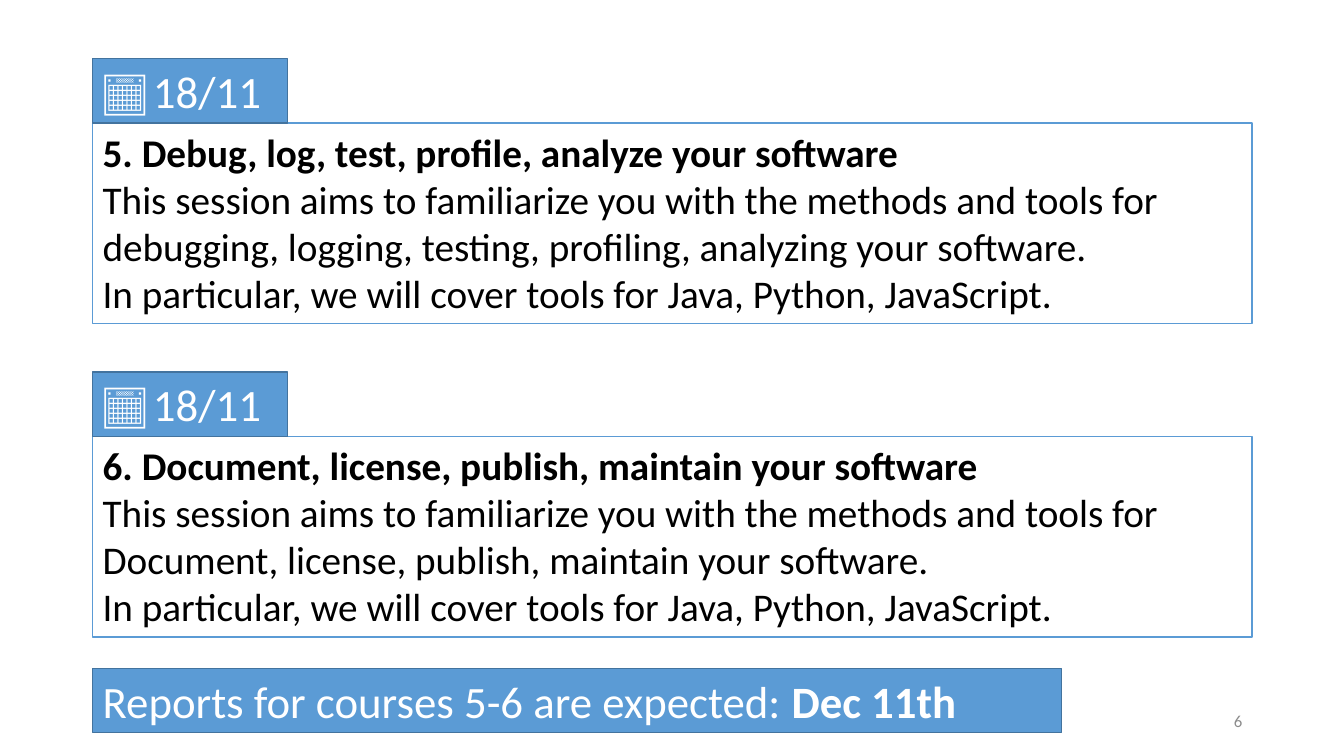
from pptx import Presentation
from pptx.dml.color import RGBColor
from pptx.enum.shapes import MSO_SHAPE
from pptx.enum.text import MSO_ANCHOR, MSO_AUTO_SIZE, PP_ALIGN
from pptx.util import Inches, Pt

RECT = MSO_SHAPE.RECTANGLE
TOP, MIDDLE = MSO_ANCHOR.TOP, MSO_ANCHOR.MIDDLE
LEFT, RIGHT = PP_ALIGN.LEFT, PP_ALIGN.RIGHT
FIT = MSO_AUTO_SIZE.SHAPE_TO_FIT_TEXT

FONT = "Calibri"
BLUE, DARK_BLUE = "5B9BD5", "43739E"
WHITE, BLACK, GREY = "FFFFFF", "000000", "8C8C8C"
MARGIN = 0.92
BAR_H = 0.64

TOOLS = "In particular, we will cover tools for Java, Python, JavaScript."
AIM = "This session aims to familiarize you with the methods and tools for "
SESSIONS = [
    (0.58, "18/11", "5. Debug, log, test, profile, analyze your software",
     "debugging, logging, testing, profiling, analyzing your software."),
    (3.69, "18/11", "6. Document, license, publish, maintain your software",
     "Document, license, publish, maintain your software."),
]


def rgb(color):
    return RGBColor.from_string(color)


def add_paragraphs(tf, paragraphs, color, align=LEFT):
    """Each paragraph is a list of (text, size, bold) runs."""
    for i, runs in enumerate(paragraphs):
        p = tf.add_paragraph() if i else tf.paragraphs[0]
        p.alignment = align
        for text, size, bold in runs:
            r = p.add_run()
            r.text = text
            r.font.name = FONT
            r.font.size = Pt(size)
            r.font.bold = bold
            r.font.color.rgb = rgb(color)


def add_box(s, top, width, height, fill, line, color, paragraphs, wrap=True):
    sp = s.shapes.add_shape(RECT, Inches(MARGIN), Inches(top), Inches(width), Inches(height))
    sp.shadow.inherit = False
    sp.fill.solid()
    sp.fill.fore_color.rgb = rgb(fill)
    sp.line.color.rgb = rgb(line)
    sp.line.width = Pt(1)
    tf = sp.text_frame
    tf.word_wrap = wrap
    tf.auto_size = FIT
    tf.vertical_anchor = TOP
    add_paragraphs(tf, paragraphs, color)


def add_bar(s, top, width, runs, wrap=True):
    add_box(s, top, width, BAR_H, BLUE, DARK_BLUE, WHITE, [runs], wrap)


def add_session(s, top, date, title, topics):
    body = [[(title, 28, True)], [(AIM + topics, 28, False)], [(TOOLS, 28, False)]]
    add_box(s, top + BAR_H, 11.5, 1.99, WHITE, BLUE, BLACK, body)
    add_bar(s, top, 1.93, [("📅", 32, False), (" ", 18, False), (date, 32, False)], wrap=False)


def add_page_number(s, number):
    sp = s.shapes.add_textbox(Inches(9.42), Inches(6.95), Inches(3), Inches(0.4))
    tf = sp.text_frame
    tf.word_wrap = True
    tf.vertical_anchor = MIDDLE
    add_paragraphs(tf, [[(number, 12, False)]], GREY, RIGHT)


def main():
    prs = Presentation()
    prs.slide_width = Inches(13.33)
    prs.slide_height = Inches(7.5)
    s = prs.slides.add_slide(prs.slide_layouts[6])
    add_page_number(s, "6")
    for session in SESSIONS:
        add_session(s, *session)
    add_bar(s, 6.63, 9.61, [("Reports for courses 5-6 are expected: ", 32, False),
                            ("Dec 11th", 32, True)])
    prs.save("out.pptx")


if __name__ == "__main__":
    main()
